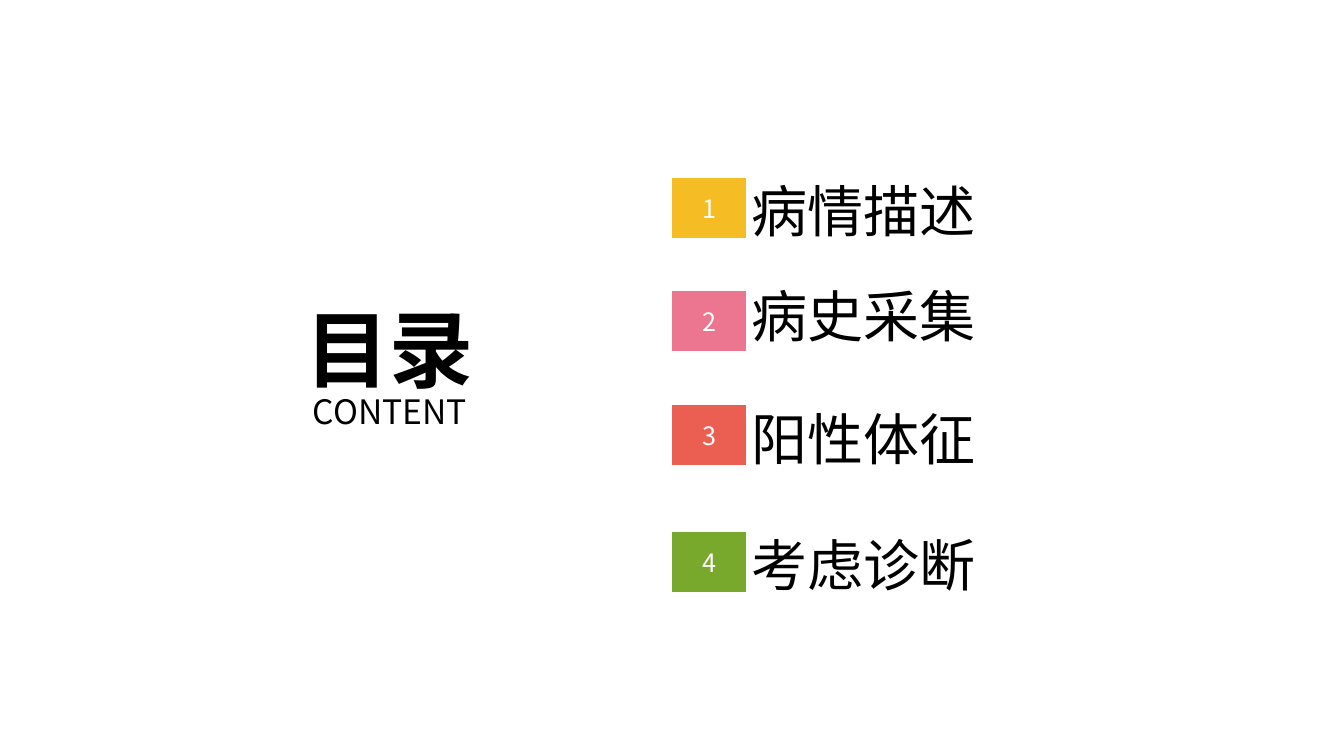
from pptx import Presentation
from pptx.dml.color import RGBColor
from pptx.enum.shapes import MSO_SHAPE
from pptx.enum.text import MSO_ANCHOR, PP_ALIGN
from pptx.oxml.ns import qn
from pptx.util import Inches, Pt
from lxml import etree

FONT = "Noto Sans CJK SC"


def paint(color_format, color):
    color_format.rgb = RGBColor.from_string(color)


def add_run(para, text, size, color, latin=FONT, bold=False):
    """Add a run with a Latin font and the shared East Asian font."""
    span = para.add_run()
    span.text = text
    span.font.size = Pt(size)
    span.font.bold = bold
    span.font.name = latin
    paint(span.font.color, color)
    east_asian = etree.SubElement(span.font._element, qn("a:ea"))
    east_asian.set("typeface", FONT)


deck = Presentation()
deck.slide_width, deck.slide_height = Inches(13.33), Inches(7.5)
page = deck.slides.add_slide(deck.slide_layouts[6])

# Chapters: number tile and heading, with the top of each
tile_left, tile_width, tile_height = 6.67, 0.73, 0.59
chapters = [
    ("病情描述", "F5BD23", 1.77, 1.70),
    ("病史采集", "EC7690", 2.89, 2.75),
    ("阳性体征", "EB5F52", 4.02, 3.97),
    ("考虑诊断", "78A82C", 5.28, 5.22),
]
for number, (heading, color, tile_top, heading_top) in enumerate(chapters, 1):
    tile = page.shapes.add_shape(
        MSO_SHAPE.PARALLELOGRAM, Inches(tile_left), Inches(tile_top),
        Inches(tile_width), Inches(tile_height))
    tile.adjustments[0] = 0
    tile.shadow.inherit = False
    tile.fill.solid()
    paint(tile.fill.fore_color, color)
    tile.line.fill.background()
    tile.text_frame.vertical_anchor = MSO_ANCHOR.MIDDLE
    para = tile.text_frame.paragraphs[0]
    para.alignment = PP_ALIGN.CENTER
    add_run(para, str(number), 18, "FFFFFF")

    box = page.shapes.add_textbox(
        Inches(tile_left + tile_width), Inches(heading_top), Inches(3.02), Inches(0.76))
    frame = box.text_frame
    frame.word_wrap = True
    frame.vertical_anchor = MSO_ANCHOR.MIDDLE
    frame.margin_left = frame.margin_right = Inches(0.05)
    frame.margin_top = frame.margin_bottom = Inches(0.05)
    add_run(frame.paragraphs[0], heading, 40, "000000", latin="Calibri")

# Title disc
disc = page.shapes.add_shape(
    MSO_SHAPE.OVAL, Inches(2.51), Inches(2.26), Inches(2.71), Inches(2.71))
disc.shadow.inherit = False
disc.fill.solid()
paint(disc.fill.fore_color, "FFFFFF")
white = disc.fill._xPr.find(qn("a:solidFill"))[0]
etree.SubElement(white, qn("a:alpha")).set("val", "78000")
disc.line.fill.background()
frame = disc.text_frame
frame.vertical_anchor = MSO_ANCHOR.MIDDLE
title, subtitle = frame.paragraphs[0], frame.add_paragraph()
title.alignment = subtitle.alignment = PP_ALIGN.CENTER
subtitle.line_spacing = 0.8
add_run(title, "目录", 60, "000000", bold=True)
add_run(subtitle, "CONTENT", 24, "000000")

deck.save("out.pptx")
